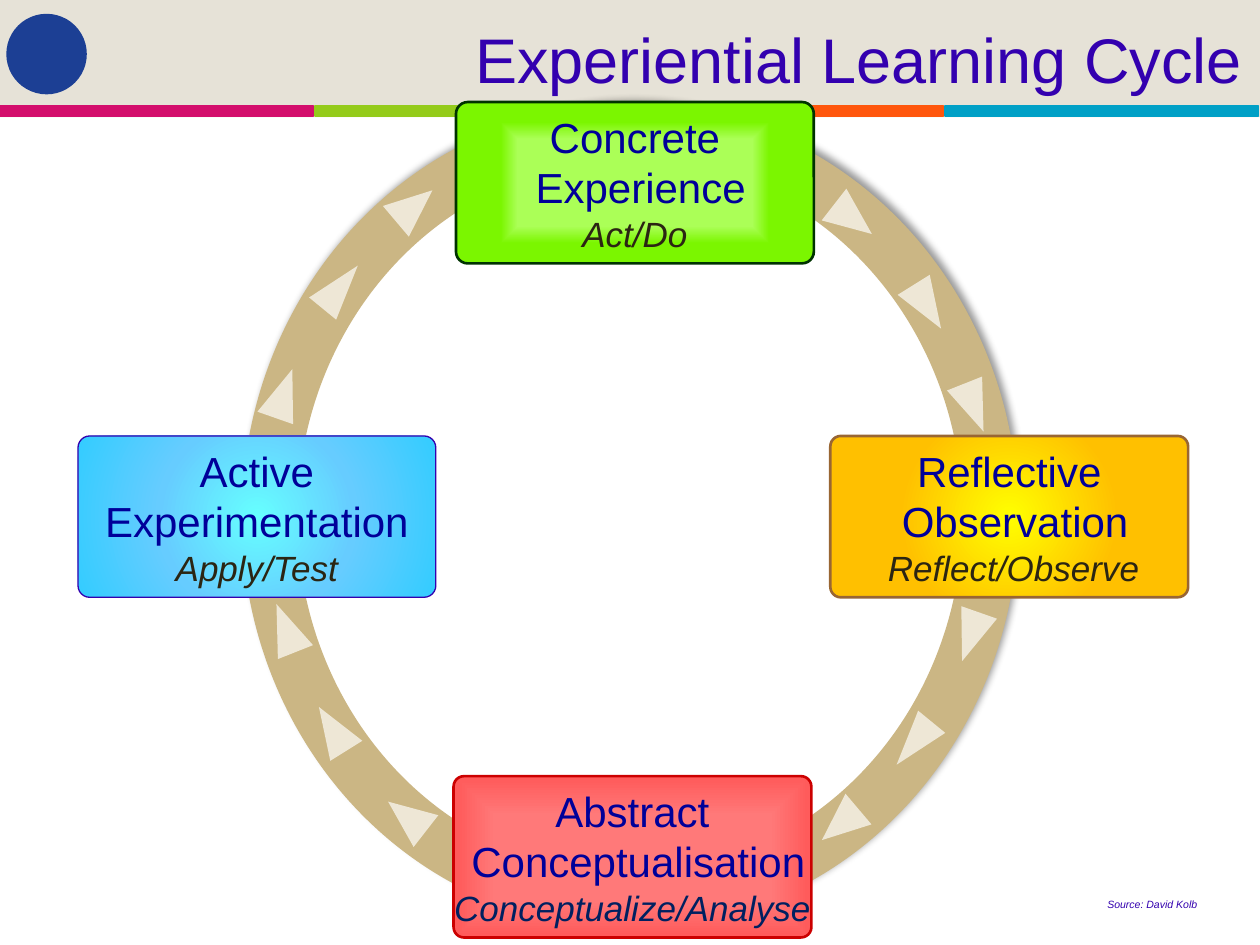
from dataclasses import dataclass

from lxml.etree import SubElement
from pptx import Presentation
from pptx.dml.color import RGBColor
from pptx.enum.shapes import MSO_SHAPE
from pptx.enum.text import MSO_ANCHOR, PP_ALIGN
from pptx.oxml import parse_xml
from pptx.oxml.ns import nsdecls, qn
from pptx.util import Pt


@dataclass(frozen=True)
class Theme:
    font: str = "Arial"
    head: str = "E6E2D7"
    mark: str = "1C3F94"
    title: str = "3300AF"
    white: str = "FFFFFF"
    ring: str = "CBB684"
    arrow: str = "EEE7D6"
    stage: str = "000099"
    act: str = "2B2513"
    navy: str = "002060"
    bars: tuple = ("D30E6C", "94CB1A", "FF560C", "00A0C6")
    big: float = 36
    mid: float = 24
    low: float = 20
    tiny: float = 6


T = Theme()
WIDE, HIGH = 720, 540

# Arrow offsets from the turning point: x, y, width, height, rotation
RIGHT = [
    (196.6, -63, 21.6, 29.5, 158.4),
    (169.9, -120.6, 21.6, 29.5, 148),
    (127.4, -170.6, 23, 27.4, 127.9),
]
LEFT = [
    (-121.7, -176.8, 23, 27.4, 49.7),
    (-164, -130.3, 20, 31.7, 39.3),
    (-196.2, -69.5, 21.6, 29.5, 19.3),
]


@dataclass
class Stage:
    box: tuple
    stops: list
    blend: str
    edge: str
    weight: float
    curve: float
    name: tuple
    act: str
    ink: str = T.act
    leads: tuple = (0, 6.67, 0)


STAGES = [
    Stage((44.6, 249.1), [(0, "66FFFF"), (50, "66CCFF"), (100, "33CCFF")],
          "circle", T.title, 0.75, 0.073,
          ("Active", "Experimentation"), "Apply/Test", leads=(0, 0, 0)),
    Stage((259.2, 443.5), [(51, "FF7979"), (98, "FF5B5B"), (100, "FF5B5B")],
          "shape", "CC0000", 1.5, 0.065,
          ("Abstract", "Conceptualisation"), "Conceptualize/Analyse", T.navy),
    Stage((474.5, 249.1), [(0, "FFFF00"), (56, "FFC000")],
          "circle", "996633", 1.5, 0.065,
          ("Reflective", "Observation"), "Reflect/Observe", leads=(0, 6.67, 5)),
    Stage((260.6, 58.3), [(54, "ABFF57"), (75, "7BF600")],
          "shape", "003300", 1.5, 0.073,
          ("Concrete", "Experience"), "Act/Do"),
]


def rgb(code):
    return RGBColor.from_string(code)


def add_form(slide, kind, box, fill, line=None, weight=0.75):
    form = slide.shapes.add_shape(kind, *map(Pt, box))
    form.shadow.inherit = False
    if fill:
        form.fill.solid()
        form.fill.fore_color.rgb = rgb(fill)
    if line:
        form.line.color.rgb = rgb(line)
        form.line.width = Pt(weight)
    else:
        form.line.fill.background()
    return form


def add_run(para, text, size, ink, slant=False):
    run = para.add_run()
    run.text = text
    run.font.name = T.font
    run.font.size = Pt(size)
    run.font.color.rgb = rgb(ink)
    run.font.italic = slant


def set_blend(form, stops, blend):
    """Fill a shape with a gradient that spreads from its centre."""
    form.fill.background()
    marks = "".join(
        f'<a:gs pos="{pos * 1000}"><a:srgbClr val="{ink}"/></a:gs>'
        for pos, ink in stops)
    grad = parse_xml(
        f'<a:gradFill {nsdecls("a")} rotWithShape="1"><a:gsLst>{marks}</a:gsLst>'
        f'<a:path path="{blend}"><a:fillToRect l="50000" t="50000" '
        'r="50000" b="50000"/></a:path></a:gradFill>')
    props = form.element.spPr
    props.replace(props.find(qn("a:noFill")), grad)


def set_shade(form):
    """Cast a soft shadow up and to the right."""
    effects = form.element.spPr.find(qn("a:effectLst"))
    shade = SubElement(effects, qn("a:outerShdw"), blurRad=str(Pt(4)),
                       dist=str(Pt(3)), dir=str(315 * 60000),
                       algn="bl", rotWithShape="0")
    ink = SubElement(shade, qn("a:srgbClr"), val="000000")
    SubElement(ink, qn("a:alpha"), val="40000")


def add_head(slide, x, y, w, h):
    add_form(slide, MSO_SHAPE.RECTANGLE, (x, y, w, h), T.head)
    # Plain mark in the corner
    add_form(slide, MSO_SHAPE.OVAL, (x + 3.6, y + 7.9, 46, 46), T.mark)
    # Colour bars
    step = w / len(T.bars)
    for i, ink in enumerate(T.bars):
        add_form(slide, MSO_SHAPE.RECTANGLE,
                 (x + i * step, y + 60.5, step - 0.7, 5.8), ink, ink)
    # Title, brought in front of the band
    title = slide.shapes.title
    title.element.getparent().append(title.element)
    title.left, title.top = Pt(x + 114.5), Pt(y + 6.5)
    title.width, title.height = Pt(602.6), Pt(53.3)
    frame = title.text_frame
    frame.word_wrap = True
    frame.vertical_anchor = MSO_ANCHOR.MIDDLE
    para = frame.paragraphs[0]
    para.alignment = PP_ALIGN.RIGHT
    add_run(para, "Experiential Learning Cycle", T.big, T.title)


def add_ring(slide, x, y, w, h):
    ring = add_form(slide, MSO_SHAPE.OVAL, (x, y, w, h), T.white, T.ring, 31.75)
    set_shade(ring)
    # Each arrow has a twin, half a turn round the ring
    mid, level = x + w / 2, y + h / 2
    for group, cx, cy in ((RIGHT, mid, level + 0.7), (LEFT, mid - 1.6, level - 0.8)):
        for dx, dy, aw, ah, turn in group:
            for sign, extra in ((1, 0), (-1, 180)):
                box = (cx + sign * dx - aw / 2, cy + sign * dy - ah / 2, aw, ah)
                arrow = add_form(slide, MSO_SHAPE.ISOSCELES_TRIANGLE, box, T.arrow)
                arrow.rotation = turn + extra


def add_stage(slide, stage, w, h):
    card = add_form(slide, MSO_SHAPE.ROUNDED_RECTANGLE, (*stage.box, w, h),
                    None, stage.edge, stage.weight)
    card.adjustments[0] = stage.curve
    set_blend(card, stage.stops, stage.blend)
    frame = card.text_frame
    frame.word_wrap = False
    frame.vertical_anchor = MSO_ANCHOR.MIDDLE
    lines = [(text, T.mid, T.stage, False) for text in stage.name]
    lines.append((stage.act, T.low, stage.ink, True))
    for i, (line, lead) in enumerate(zip(lines, stage.leads)):
        para = frame.add_paragraph() if i else frame.paragraphs[0]
        para.alignment = PP_ALIGN.CENTER
        if lead:
            para._p.get_or_add_pPr().set("marL", str(Pt(lead)))
        add_run(para, *line)


def add_note(slide, x, y, w, h):
    note = slide.shapes.add_textbox(Pt(x), Pt(y), Pt(w), Pt(h))
    note.text_frame.word_wrap = True
    add_run(note.text_frame.paragraphs[0], "Source: David Kolb",
            T.tiny, T.title, True)


def main():
    deck = Presentation()
    deck.slide_width, deck.slide_height = Pt(WIDE), Pt(HIGH)
    slide = deck.slides.add_slide(deck.slide_layouts[5])
    add_head(slide, 0, 0, WIDE, 67)
    add_ring(slide, 154, 75.6, 412, 439.2)
    add_note(slide, 625.7, 509.8, 72, 14.4)
    for stage in STAGES:
        add_stage(slide, stage, 204.5, 92.2)
    deck.save("out.pptx")


if __name__ == "__main__":
    main()
